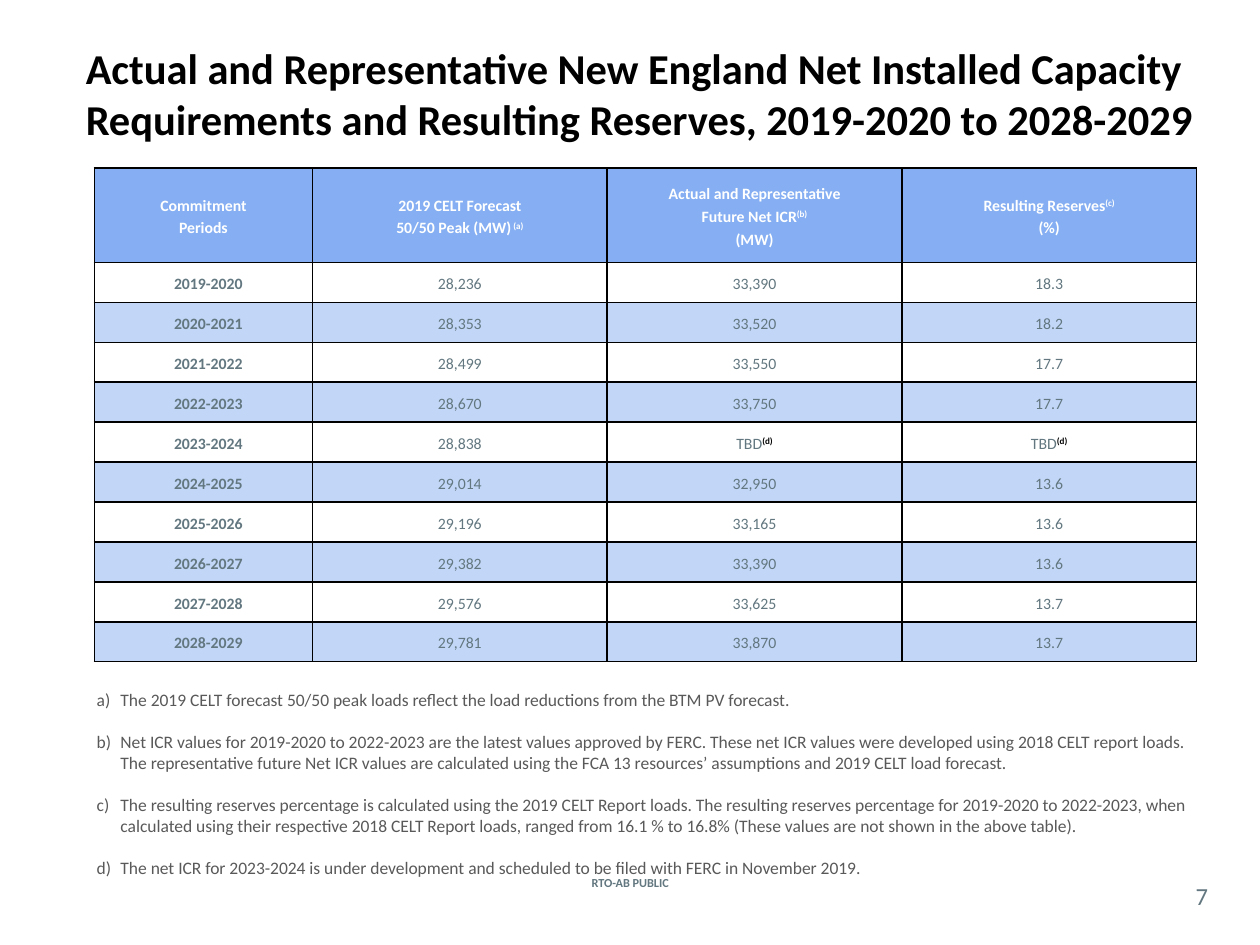
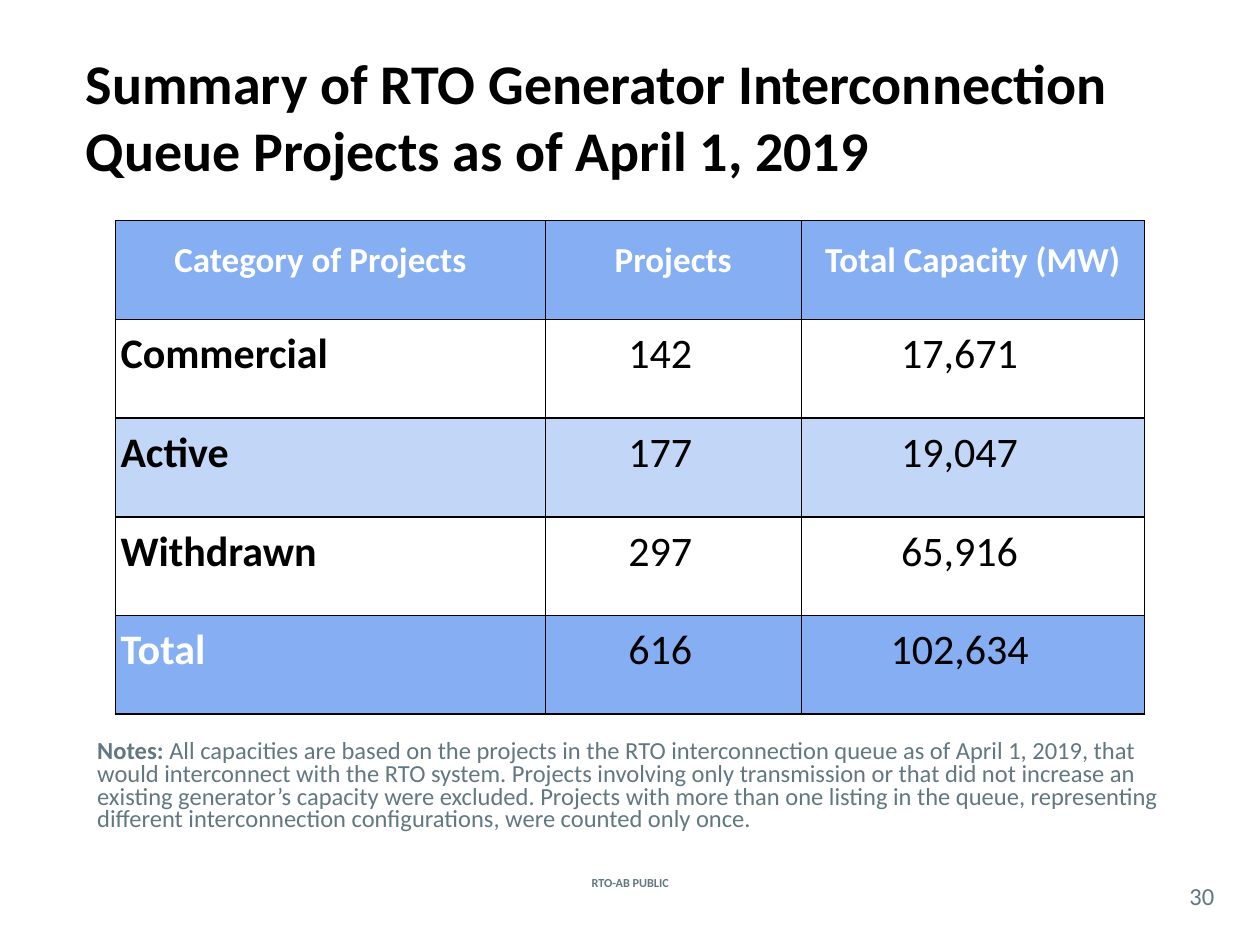
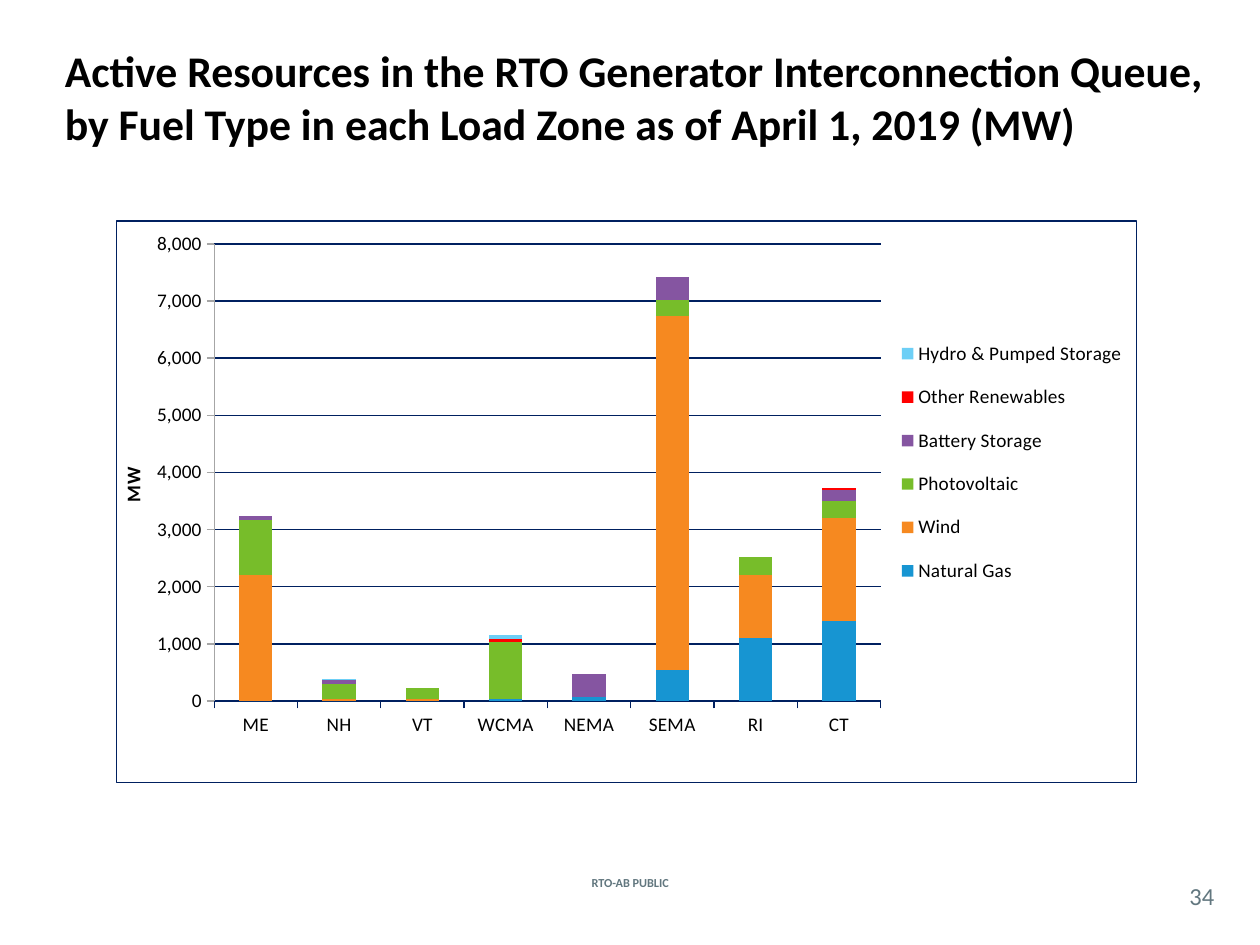
"""Builds three slides on capacity needs and the generator interconnection queue."""
from lxml import etree
from pptx import Presentation
from pptx.chart.data import CategoryChartData
from pptx.dml.color import RGBColor
from pptx.enum.chart import XL_CHART_TYPE, XL_LEGEND_POSITION, XL_TICK_MARK
from pptx.enum.text import MSO_ANCHOR, PP_ALIGN
from pptx.oxml import parse_xml
from pptx.oxml.ns import nsdecls, qn
from pptx.util import Cm, Pt

STACKED = XL_CHART_TYPE.COLUMN_STACKED
RIGHT = XL_LEGEND_POSITION.RIGHT
OUTSIDE = XL_TICK_MARK.OUTSIDE
TOP, MIDDLE = MSO_ANCHOR.TOP, MSO_ANCHOR.MIDDLE
LEFT, CENTER = PP_ALIGN.LEFT, PP_ALIGN.CENTER

FACE = "Calibri"
BLACK, WHITE, SLATE, GRAY = "000000", "FFFFFF", "62777F", "595959"
BLUE, PALE, NAVY, SILVER = "85AFF2", "C2D7F8", "002060", "A6A6A6"


def hue(code):
    return RGBColor.from_string(code)


def write(frame, text, size=9, color=BLACK, bold=False, align=LEFT, lead="",
          spacing=None, before=0, listed=False, mark=None):
    frame.word_wrap = True
    for index, line in enumerate(text.split("\n")):
        para = frame.add_paragraph() if index else frame.paragraphs[0]
        para.alignment = align
        if listed:
            props = para._p.get_or_add_pPr()
            props.set("marL", str(Cm(0.48)))
            props.set("indent", str(-Cm(0.48)))
            etree.SubElement(props, qn("a:buFont")).set("typeface", FACE)
            etree.SubElement(props, qn("a:buAutoNum")).set("type", "alphaLcParenR")
        if spacing:
            para.line_spacing = Pt(spacing)
        if index and before:
            para.space_before = Pt(before)
        body, _, raised = line.partition("^")
        for part, heavy, ink in [(lead, True, color), (body, bold, color),
                                 (raised, True, mark or color)]:
            if part:
                run = para.add_run()
                run.text = part
                font = run.font
                font.name, font.size, font.bold = FACE, Pt(size), heavy
                font.color.rgb = hue(ink)
                if part == raised:
                    run._r.get_or_add_rPr().set("baseline", "30000")


deck = Presentation()
deck.slide_width, deck.slide_height = Cm(25.4), Cm(19.05)

titles = [
    ("Actual and Representative New England Net Installed Capacity Requirements "
     "and Resulting Reserves, 2019-2020 to 2028-2029",
     24.3, MIDDLE, (1.48, 0.33, 22.86, 3.1), "7"),
    ("Summary of RTO Generator Interconnection Queue Projects as of April 1, 2019",
     32, TOP, (1.48, 0.85, 24.13, 3.18), "30"),
    ("Active Resources in the RTO Generator Interconnection Queue, "
     "by Fuel Type in each Load Zone as of April 1, 2019 (MW)",
     25, TOP, (1.06, 0.76, 23.93, 4.11), "34"),
]
slides = []
for title, size, anchor, place, number in titles:
    slide = deck.slides.add_slide(deck.slide_layouts[6])
    slides.append(slide)
    footer = slide.shapes.add_textbox(Cm(10.84), Cm(17.58), Cm(3.73), Cm(0.43)).text_frame
    footer.vertical_anchor = MIDDLE
    write(footer, "RTO-AB PUBLIC", size=7, color=SLATE, bold=True, align=CENTER)
    head = slide.shapes.add_textbox(*map(Cm, place)).text_frame
    head.vertical_anchor = anchor
    write(head, title, size=size, bold=True)
    page = slide.shapes.add_textbox(Cm(23.8), Cm(17.68), Cm(0.86), Cm(0.74)).text_frame
    page.margin_left = page.margin_right = page.margin_top = page.margin_bottom = 0
    page.vertical_anchor = MIDDLE
    write(page, number, size=14, color=SLATE, align=CENTER)

needs = [
    ("Commitment\nPeriods", "2019 CELT Forecast\n50/50 Peak (MW)^ (a)",
     "Actual and Representative\nFuture Net ICR^(b)\n(MW)", "Resulting Reserves^(c)\n(%)"),
    ("2019-2020", "28,236", "33,390", "18.3"),
    ("2020-2021", "28,353", "33,520", "18.2"),
    ("2021-2022", "28,499", "33,550", "17.7"),
    ("2022-2023", "28,670", "33,750", "17.7"),
    ("2023-2024", "28,838", "TBD^(d)", "TBD^(d)"),
    ("2024-2025", "29,014", "32,950", "13.6"),
    ("2025-2026", "29,196", "33,165", "13.6"),
    ("2026-2027", "29,382", "33,390", "13.6"),
    ("2027-2028", "29,576", "33,625", "13.7"),
    ("2028-2029", "29,781", "33,870", "13.7"),
]
queue = [
    ("Category of Projects", "Projects", "Total Capacity (MW)"),
    ("Commercial", "142", "17,671"),
    ("Active", "177", "19,047"),
    ("Withdrawn", "297", "65,916"),
    ("Total", "616", "102,634"),
]
tables = [
    dict(rows=needs, place=(1.9, 3.39, 22.22, 9.95), wide=(4.4, 5.94, 5.94, 5.94),
         top=1.9, sizes=(9, 9), ink=SLATE, first=CENTER, edge=0,
         pads=[(0.1, 0.1), (0.1, 0.1), (0.2, 0), (0.1, 0.1)]),
    dict(rows=queue, place=(2.33, 4.45, 20.74, 9.95), wide=(8.67, 5.16, 6.91),
         top=1.99, sizes=(20, 24), ink=BLACK, first=LEFT, edge=0.05,
         pads=[(0.1, 0.51), (0.18, 0.2), (0.1, 0.51), (0.1, 0.64)]),
]
for slide, plan in zip(slides, tables):
    rows, wide = plan["rows"], plan["wide"]
    grid = slide.shapes.add_table(len(rows), len(wide), *map(Cm, plan["place"])).table
    grid.first_row = grid.horz_banding = False
    for col, width in zip(grid.columns, wide):
        col.width = Cm(width)
    for r, row in enumerate(rows):
        is_head, is_sum = r == 0, row[0] == "Total"
        rest = (plan["place"][3] - plan["top"]) / (len(rows) - 1)
        grid.rows[r].height = Cm(plan["top"] if is_head else rest)
        for c, text in enumerate(row):
            cell = grid.cell(r, c)
            cell.vertical_anchor = MIDDLE
            near, far = plan["pads"][(0 if is_head else 2) + (c > 0)]
            cell.margin_left, cell.margin_right = Cm(near), Cm(far)
            cell.margin_top = cell.margin_bottom = Cm(plan["edge"])
            white = is_head or (is_sum and c == 0)
            write(cell.text_frame, text, size=plan["sizes"][not is_head],
                  color=WHITE if white else plan["ink"], bold=is_head or c == 0,
                  align=plan["first"] if c == 0 and not is_head else CENTER,
                  spacing=13, mark=WHITE if is_head else BLACK)
            if is_head or is_sum or r % 2 == 0:
                cell.fill.solid()
                cell.fill.fore_color.rgb = hue(BLUE if is_head or is_sum else PALE)
            else:
                cell.fill.background()
            for spot, side in enumerate("LRTB"):
                cell._tc.get_or_add_tcPr().insert(spot, parse_xml(
                    f'<a:ln{side} {nsdecls("a")} w="12700"><a:solidFill>'
                    f'<a:srgbClr val="{BLACK}"/></a:solidFill></a:ln{side}>'))

notes = slides[0].shapes.add_textbox(Cm(1.7), Cm(13.77), Cm(22.86), Cm(4.01)).text_frame
write(notes, "The 2019 CELT forecast 50/50 peak loads reflect the load reductions from "
      "the BTM PV forecast.\n"
      "Net ICR values for 2019-2020 to 2022-2023 are the latest values approved by FERC. "
      "These net ICR values were developed using 2018 CELT report loads. The representative "
      "future Net ICR values are calculated using the FCA 13 resources’ assumptions and "
      "2019 CELT load forecast.\n"
      "The resulting reserves percentage is calculated using the 2019 CELT Report loads. "
      "The resulting reserves percentage for 2019-2020 to 2022-2023, when calculated using "
      "their respective 2018 CELT Report loads, ranged from 16.1 % to 16.8% (These values "
      "are not shown in the above table).\n"
      "The net ICR for 2023-2024 is under development and scheduled to be filed with FERC "
      "in November 2019.", size=10, color=GRAY, before=12, listed=True)

notes = slides[1].shapes.add_textbox(Cm(1.71), Cm(14.83), Cm(22.66), Cm(2.11)).text_frame
write(notes, " All capacities are based on the projects in the RTO interconnection queue as "
      "of April 1, 2019, that would interconnect with the RTO system. Projects involving "
      "only transmission or that did not increase an existing generator’s capacity were "
      "excluded. Projects with more than one listing in the queue, representing different "
      "interconnection configurations, were counted only once.",
      size=14, color=SLATE, lead="Notes:", spacing=13)

fuels = [
    ("Natural Gas", "1795D2", (0, 0, 0, 30, 70, 540, 1100, 1400)),
    ("Wind", "F68920", (2200, 40, 40, 0, 0, 6200, 1100, 1800)),
    ("Photovoltaic", "77BD2A", (960, 250, 180, 1000, 0, 280, 320, 300)),
    ("Battery Storage", "8555A1", (80, 80, 0, 0, 400, 400, 0, 200)),
    ("Other Renewables", "FF0000", (0, 0, 0, 50, 0, 0, 0, 20)),
    ("Hydro & Pumped Storage", "6DCFF6", (0, 20, 0, 70, 0, 0, 0, 0)),
]
data = CategoryChartData(number_format="#,##0")
data.categories = ["ME", "NH", "VT", "WCMA", "NEMA", "SEMA", "RI", "CT"]
for name, _, values in fuels:
    data.add_series(name, values)
chart = slides[2].shapes.add_chart(
    STACKED, Cm(2.33), Cm(4.44), Cm(20.6), Cm(11.35), data).chart
chart.has_title = False
chart.font.name, chart.font.size = FACE, Pt(11)
chart.font.color.rgb = hue(BLACK)
plot = chart.plots[0]
plot.gap_width, plot.overlap, plot.vary_by_categories = 150, 100, False
for series, (_, color, _) in zip(plot.series, fuels):
    series.format.fill.solid()
    series.format.fill.fore_color.rgb = hue(color)
zones, scale = chart.category_axis, chart.value_axis
scale.minimum_scale, scale.maximum_scale, scale.major_unit = 0, 8000, 1000
scale.has_major_gridlines = True
scale.tick_labels.number_format = "#,##0"
scale.tick_labels.number_format_is_linked = False
for axis in (zones, scale):
    axis.major_tick_mark = OUTSIDE
for line, color in [(zones.format.line, NAVY), (scale.format.line, SILVER),
                    (scale.major_gridlines.format.line, NAVY)]:
    line.width = Pt(0.75)
    line.color.rgb = hue(color)
write(scale.axis_title.text_frame, "MW", size=11, bold=True)
chart.has_legend = True
legend = chart.legend
legend.position, legend.include_in_layout = RIGHT, False
legend.font.name, legend.font.size = FACE, Pt(11)
legend.font.color.rgb = hue(BLACK)

area = chart._chartSpace.chart.plotArea
for part, spot, inner, box in [
        (area, 0, '<c:layoutTarget val="inner"/>', (0.096, 0.041, 0.653, 0.814)),
        (legend._element, 1, "", (0.76, 0.18, 0.235, 0.5))]:
    for old in part.findall(qn("c:layout")):
        part.remove(old)
    modes = "".join(f'<c:{side}Mode val="edge"/>' for side in "xy")
    sizes = "".join(f'<c:{side} val="{value}"/>' for side, value in zip("xywh", box))
    part.insert(spot, parse_xml(
        f'<c:layout {nsdecls("c")}><c:manualLayout>{inner}{modes}{sizes}'
        '</c:manualLayout></c:layout>'))
chart._chartSpace.chart.addnext(parse_xml(
    f'<c:spPr {nsdecls("c", "a")}><a:noFill/><a:ln w="9525"><a:solidFill>'
    f'<a:srgbClr val="{NAVY}"/></a:solidFill></a:ln></c:spPr>'))

deck.save("out.pptx")
